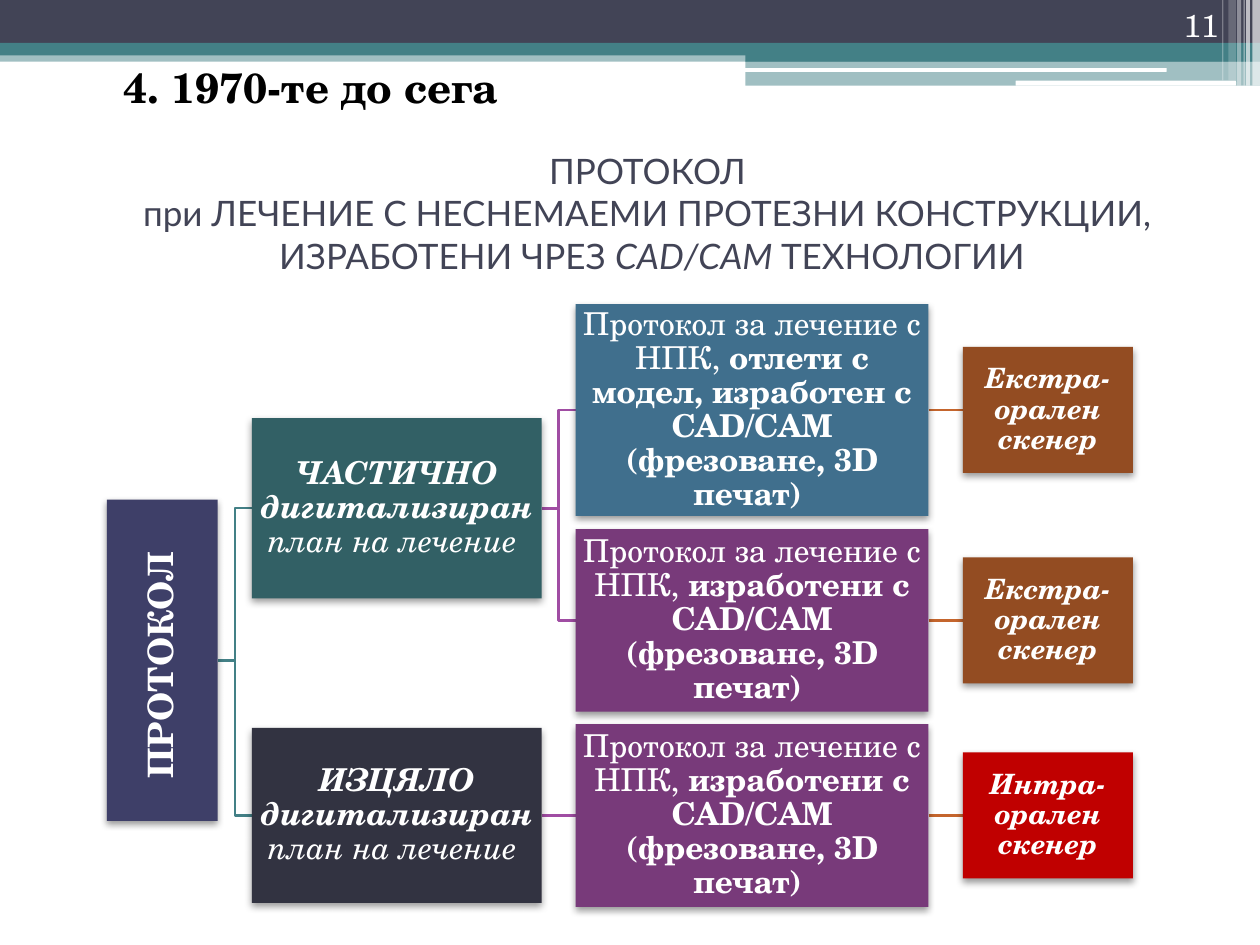
"""Build the treatment protocol slide."""
from copy import deepcopy
from dataclasses import dataclass

from lxml.etree import SubElement
from pptx import Presentation
from pptx.dml.color import RGBColor
from pptx.enum.shapes import MSO_CONNECTOR, MSO_SHAPE
from pptx.enum.text import MSO_ANCHOR, MSO_AUTO_SIZE, PP_ALIGN
from pptx.oxml.ns import qn
from pptx.util import Pt

SERIF, SANS = "TeX Gyre Schola", "Lato"
WHITE, SLATE, TEAL = "FFFFFF", "424456", "438086"
PURPLE, ORANGE = "A04DA3", "C4652D"


@dataclass(frozen=True)
class Span:
    text: str
    bold: bool = False
    italic: bool = False


@dataclass(frozen=True)
class Band:
    left: float
    top: float
    width: float
    height: float
    fill: str = WHITE
    opacity: int = 100
    shape: MSO_SHAPE = MSO_SHAPE.RECTANGLE


@dataclass(frozen=True)
class Node:
    left: float
    middle: float
    width: float
    height: float
    fill: str
    size: float
    spans: tuple[Span, ...]
    rotation: int = 0


def colour(value: str) -> RGBColor:
    return RGBColor.from_string(value)


def write(frame, spans, size, font=SERIF, fill=WHITE, align=PP_ALIGN.CENTER,
          anchor=MSO_ANCHOR.MIDDLE, inset=None, indent=0, **spacing):
    layout = {"word_wrap": True, "auto_size": MSO_AUTO_SIZE.NONE, "vertical_anchor": anchor}
    if inset is not None:
        layout |= {f"margin_{side}": Pt(inset) for side in ("left", "right", "top", "bottom")}
    for name, value in layout.items():
        setattr(frame, name, value)
    para = frame.paragraphs[0]
    for name, value in {"alignment": align, **spacing}.items():
        setattr(para, name, value)
    if indent:
        para._p.get_or_add_pPr().set("marL", str(Pt(indent)))
    for span in spans:
        for index, line in enumerate(span.text.split("\n")):
            if index:
                para.add_line_break()
            if not line:
                continue
            run = para.add_run()
            run.text = line
            style = {"name": font, "size": Pt(size), "bold": span.bold, "italic": span.italic}
            for name, value in style.items():
                setattr(run.font, name, value)
            run.font.color.rgb = colour(fill)
    for line_break in para._p.findall(qn("a:br")):
        line_break.append(deepcopy(para.runs[0].font._element))


def add_band(slide, band: Band):
    box = slide.shapes.add_shape(
        band.shape, Pt(band.left), Pt(band.top), Pt(band.width), Pt(band.height))
    box.shadow.inherit = False
    box.fill.solid()
    box.fill.fore_color.rgb = colour(band.fill)
    box.line.fill.background()
    if band.opacity < 100:
        tint = box._element.spPr.find(qn("a:solidFill"))[0]
        SubElement(tint, qn("a:alpha"), val=str(band.opacity * 1000))
    return box


def add_node(slide, node: Node):
    box = add_band(slide, Band(node.left, node.middle - node.height / 2,
                               node.width, node.height, node.fill))
    box.rotation = node.rotation
    effects = box._element.spPr.find(qn("a:effectLst"))
    shadow = SubElement(effects, qn("a:outerShdw"), blurRad=str(Pt(4.1)),
                        dist=str(Pt(2)), dir="5400000", rotWithShape="0")
    black = SubElement(shadow, qn("a:srgbClr"), val="000000")
    SubElement(black, qn("a:alpha"), val="40000")
    write(box.text_frame, node.spans, node.size, inset=0.9, line_spacing=0.9)


def add_link(slide, start: float, end: float, source: float, target: float, fill: str):
    kind = MSO_CONNECTOR.STRAIGHT if source == target else MSO_CONNECTOR.ELBOW
    link = slide.shapes.add_connector(kind, Pt(start), Pt(source), Pt(end), Pt(target))
    link.line.color.rgb = colour(fill)
    link.line.width = Pt(1.5)
    SubElement(link._element.spPr, qn("a:effectLst"))


def add_text(slide, left, top, width, height, text, size, bold=False, **style):
    box = slide.shapes.add_textbox(Pt(left), Pt(top), Pt(width), Pt(height))
    write(box.text_frame, [Span(text, bold)], size, **style)


def plan(middle, height, fill, scope):
    return Node(144, middle, 165.6, height, fill, 18, (
        Span(f"{scope} дигитализиран", True, True), Span(" план на лечение ", italic=True)))


def method(middle, height, fill, detail):
    return Node(329, middle, 201.6, height, fill, 18, (
        Span("Протокол за лечение с НПК, "),
        Span(f"{detail} с CAD/CAM (фрезоване, 3D печат) ", True)))


def scanner(middle, fill, prefix):
    return Node(550.2, middle, 97.2, 72, fill, 16,
                (Span(f"{prefix}-орален скенер", True, True),))


STRIPES = [(715.7, 4.3, 49, 65), (712.1, 2.2, 49, 65), (710.6, 0.7, 49, 60),
           (707, 2.2, 49, 40), (702, 4.3, 46, 20), (698.4, 0.7, 46, 30)]
BANDS = [
    Band(0, 28.8, 720, 6.5, TEAL, 50),
    Band(0, 0, 720, 24.5, SLATE),
    Band(0, 24.5, 720, 7.2, TEAL),
    Band(426, 28.1, 294, 7.2, TEAL),
    Band(426, 34.6, 294, 14.4, TEAL, 50),
    Band(425.5, 38.9, 241.2, 2.2, shape=MSO_SHAPE.ROUNDED_RECTANGLE),
    Band(580.3, 46.1, 126, 2.9, shape=MSO_SHAPE.ROUNDED_RECTANGLE),
] + [Band(left, 0, width, height, WHITE, opacity)
     for left, width, height, opacity in STRIPES]

ROOT, PARTIAL, FULL = 377.3, 290.4, 466
MODEL, MADE = 234.3, 354.5
LINKS = ([(124.6, 144, ROOT, row, TEAL) for row in (PARTIAL, FULL)]
         + [(309.6, 329, source, row, PURPLE)
            for source, row in ((PARTIAL, MODEL), (PARTIAL, MADE), (FULL, FULL))]
         + [(530.6, 550.2, row, row, ORANGE) for row in (MODEL, MADE, FULL)])
NODES = [
    Node(0.9, ROOT, 183.6, 63.4, "3E3F68", 20, (Span("ПРОТОКОЛ ", True),), 270),
    plan(PARTIAL, 103, "326065", "ЧАСТИЧНО"),
    plan(FULL, 100, "323341", "ИЗЦЯЛО"),
    method(MODEL, 121, "406F8D", "отлети с модел, изработен"),
    method(MADE, 104.4, "783A7A", "изработени"),
    method(FULL, 104.4, "783A7A", "изработени"),
    scanner(MODEL, "934C22", "Екстра"),
    scanner(MADE, "934C22", "Екстра"),
    scanner(FULL, "C00000", "Интра"),
]
TITLE = (Span("ПРОТОКОЛ \nпри ЛЕЧЕНИЕ С НЕСНЕМАЕМИ ПРОТЕЗНИ КОНСТРУКЦИИ, \nИЗРАБОТЕНИ ЧРЕЗ "),
         Span("CAD/CAM ", italic=True), Span("ТЕХНОЛОГИИ"))


def main():
    deck = Presentation()
    deck.slide_width, deck.slide_height = Pt(720), Pt(540)
    page = deck.slides.add_slide(deck.slide_layouts[5])
    for band in BANDS:
        add_band(page, band)
    for link in LINKS:
        add_link(page, *link)
    for node in NODES:
        add_node(page, node)
    title = page.shapes.title
    place = {"left": 31, "top": 82.8, "width": 674.6, "height": 77.8}
    for name, value in place.items():
        setattr(title, name, Pt(value))
    write(title.text_frame, TITLE, 20, SANS, SLATE, indent=8.6)
    add_text(page, 8.6, 31.7, 329.8, 39.6, "4. 1970-те до сега", 24, True, fill="000000",
             anchor=MSO_ANCHOR.TOP, indent=8.6, space_before=Pt(3))
    add_text(page, 643.7, 0, 59.8, 28.8, "11", 18,
             align=PP_ALIGN.RIGHT, anchor=MSO_ANCHOR.BOTTOM)
    deck.save("out.pptx")


if __name__ == "__main__":
    main()
